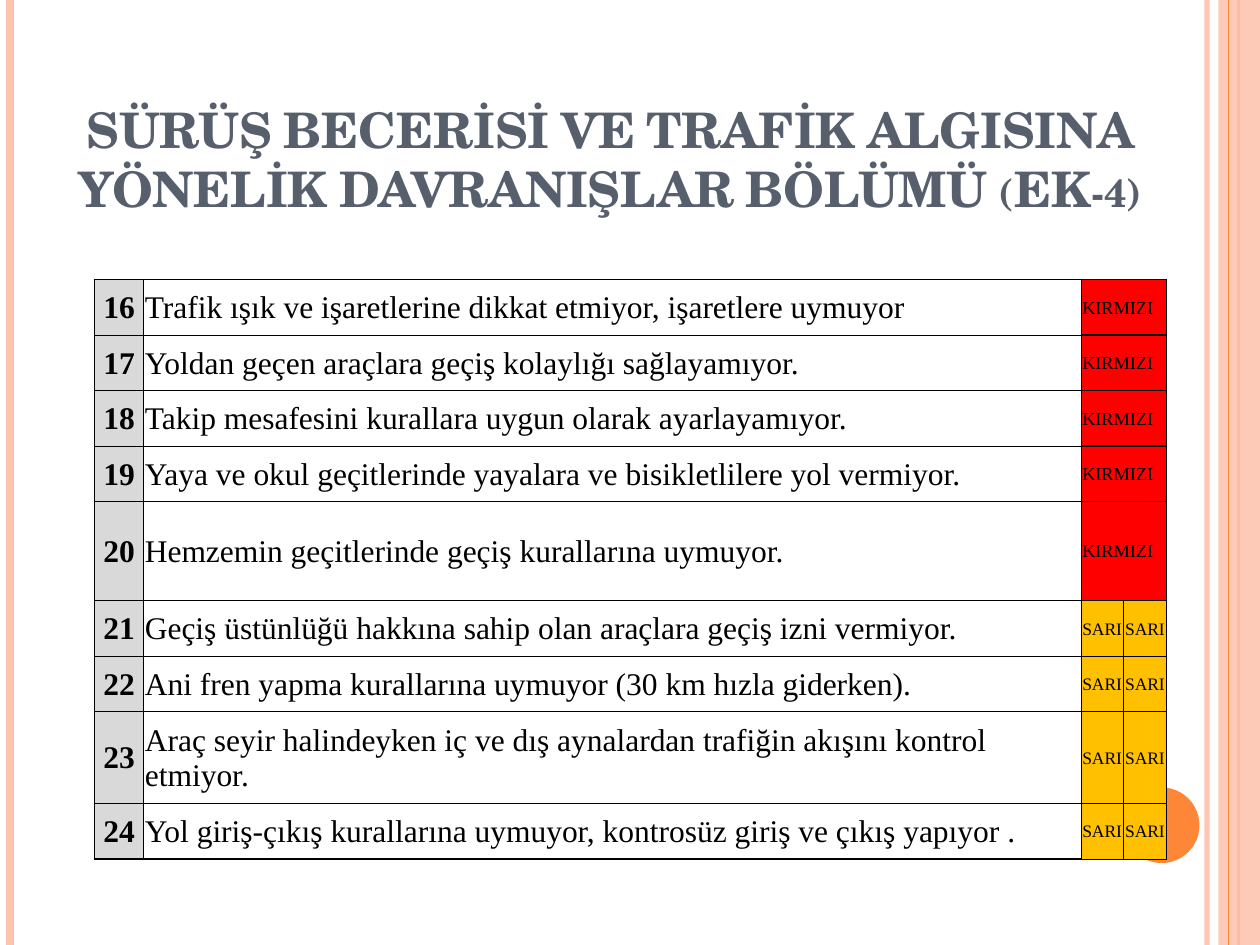
"""Build a slide with a table of driving-skill faults."""
from dataclasses import dataclass

from lxml import etree
from pptx import Presentation
from pptx.dml.color import RGBColor
from pptx.enum.shapes import MSO_CONNECTOR, MSO_SHAPE
from pptx.enum.text import MSO_ANCHOR, PP_ALIGN
from pptx.oxml.ns import qn
from pptx.util import Inches, Pt

STRAIGHT = MSO_CONNECTOR.STRAIGHT
RECTANGLE, OVAL = MSO_SHAPE.RECTANGLE, MSO_SHAPE.OVAL
MIDDLE, BOTTOM = MSO_ANCHOR.MIDDLE, MSO_ANCHOR.BOTTOM
LEFT, CENTER = PP_ALIGN.LEFT, PP_ALIGN.CENTER


@dataclass(frozen=True)
class Theme:
    """Colours, fonts and type sizes of the slide."""
    peach: str = "FEC3AE"
    orange: str = "FE8637"
    slate: str = "575F6D"
    black: str = "000000"
    grey: str = "D9D9D9"
    red: str = "FF0000"
    yellow: str = "FFC000"
    title_font: str = "TeX Gyre Schola"
    table_font: str = "Times New Roman"
    title_size: float = 28
    body_size: float = 18
    red_size: float = 10.5
    yellow_size: float = 10
    thin: float = 0.5
    thick: float = 1


THEME = Theme()
TITLE = "SÜRÜŞ BECERİSİ VE TRAFİK ALGISINA YÖNELİK DAVRANIŞLAR BÖLÜMÜ (EK-4)"
FIRST_NUMBER = 16
RED_COUNT = 5
COLUMN_WIDTHS = (0.39, 7.44, 0.34, 0.34)
ROW_HEIGHT = 0.44
TALL_ROWS = {4: 0.79, 7: 0.73}
FAULTS = (
    "Trafik ışık ve işaretlerine dikkat etmiyor, işaretlere uymuyor",
    "Yoldan geçen araçlara geçiş kolaylığı sağlayamıyor.",
    "Takip mesafesini kurallara uygun olarak ayarlayamıyor.",
    "Yaya ve okul geçitlerinde yayalara ve bisikletlilere yol vermiyor.",
    "Hemzemin geçitlerinde geçiş kurallarına uymuyor.",
    "Geçiş üstünlüğü hakkına sahip olan araçlara geçiş izni vermiyor.",
    "Ani fren yapma kurallarına uymuyor (30 km hızla giderken).",
    "Araç seyir halindeyken iç ve dış aynalardan trafiğin akışını kontrol etmiyor.",
    "Yol giriş-çıkış kurallarına uymuyor, kontrosüz giriş ve çıkış yapıyor .",
)


def set_opacity(shape, percent):
    """Make the first colour of a shape partly transparent."""
    color = next(shape._element.spPr.iter(qn("a:srgbClr")))
    etree.SubElement(color, qn("a:alpha")).set("val", str(percent * 1000))


def add_stripe(slide, x, color, width):
    """Draw a vertical line over the full slide height."""
    stripe = slide.shapes.add_connector(
        STRAIGHT, Inches(x), Inches(0), Inches(x), Inches(7.5))
    stripe.line.color.rgb = RGBColor.from_string(color)
    stripe.line.width = Pt(width)
    etree.SubElement(stripe._element.spPr, qn("a:effectLst"))
    return stripe


def add_block(slide, kind, box, color):
    """Draw a filled shape without an outline."""
    shape = slide.shapes.add_shape(kind, *map(Inches, box))
    shape.shadow.inherit = False
    shape.fill.solid()
    shape.fill.fore_color.rgb = RGBColor.from_string(color)
    shape.line.fill.background()
    return shape


def add_text(frame, text, font, size, color, bold=False, align=LEFT):
    """Write one run into the first paragraph and return the run."""
    paragraph = frame.paragraphs[0]
    paragraph.alignment = align
    run = paragraph.add_run()
    run.text = text
    run.font.name = font
    run.font.size = Pt(size)
    run.font.bold = bold
    run.font.color.rgb = RGBColor.from_string(color)
    return run


def add_title(slide):
    """Add the centred title in small capitals."""
    box = slide.shapes.add_textbox(
        Inches(0.28), Inches(0.52), Inches(9.13), Inches(1.25))
    frame = box.text_frame
    frame.word_wrap = True
    frame.vertical_anchor = BOTTOM
    run = add_text(frame, TITLE, THEME.title_font, THEME.title_size,
                   THEME.slate, True, CENTER)
    run._r.get_or_add_rPr().set("cap", "small")


def set_borders(cell, thick_sides):
    """Draw all four cell borders, the named sides thicker."""
    properties = cell._tc.get_or_add_tcPr()
    for side in "LRTB":
        width = THEME.thick if side in thick_sides else THEME.thin
        line = etree.SubElement(properties, qn(f"a:ln{side}"), w=str(Pt(width)))
        fill = etree.SubElement(line, qn("a:solidFill"))
        etree.SubElement(fill, qn("a:srgbClr"), val=THEME.black)


def fill_cell(cell, text, size, color=None, thick_sides="", bold=False, align=LEFT):
    """Set text, margins, borders and fill of a table cell."""
    cell.margin_left = cell.margin_top = cell.margin_right = Inches(0.01)
    cell.margin_bottom = Inches(0)
    cell.vertical_anchor = MIDDLE
    set_borders(cell, thick_sides)
    if color:
        cell.fill.solid()
        cell.fill.fore_color.rgb = RGBColor.from_string(color)
    else:
        cell.fill.background()
    if text:
        add_text(cell.text_frame, text, THEME.table_font, size, THEME.black, bold, align)


def add_fault_table(slide):
    """Add the numbered faults with their red or yellow rating."""
    last = len(FAULTS) - 1
    table = slide.shapes.add_table(
        len(FAULTS), len(COLUMN_WIDTHS), Inches(0.75), Inches(2.22),
        Inches(8.5), Inches(4.6)).table
    table.first_row = table.horz_banding = False
    for column, width in zip(table.columns, COLUMN_WIDTHS):
        column.width = Inches(width)
    for index, fault in enumerate(FAULTS):
        table.rows[index].height = Inches(TALL_ROWS.get(index, ROW_HEIGHT))
        number, description, first, second = table.rows[index].cells
        edge = "T" if index == 0 else "B" if index == last else ""
        fill_cell(number, str(FIRST_NUMBER + index), THEME.body_size,
                  THEME.grey, "L" + edge, True, CENTER)
        fill_cell(description, fault, THEME.body_size, thick_sides=edge)
        if index < RED_COUNT:
            sides = "TR" if index == RED_COUNT - 1 else "TRB"
            first.merge(second)
            fill_cell(first, "KIRMIZI", THEME.red_size, THEME.red, sides)
            fill_cell(second, "", THEME.red_size, THEME.red, sides)
        else:
            for cell in (first, second):
                fill_cell(cell, "SARI", THEME.yellow_size, THEME.yellow)


def add_decoration(slide):
    """Draw the side stripes, the band and the dot."""
    set_opacity(add_stripe(slide, 9.58, THEME.peach, 3), 93)
    add_stripe(slide, 0.08, THEME.peach, 4.5)
    add_stripe(slide, 9.83, THEME.orange, 1.5)
    set_opacity(add_block(slide, RECTANGLE, (9.67, 0, 0.33, 7.5), THEME.peach), 87)
    add_stripe(slide, 9.75, THEME.orange, 0.75)
    add_block(slide, OVAL, (8.92, 6.25, 0.6, 0.6), THEME.orange)


def main():
    """Build and save the presentation."""
    presentation = Presentation()
    presentation.slide_width, presentation.slide_height = Inches(10), Inches(7.5)
    slide = presentation.slides.add_slide(presentation.slide_layouts[6])
    add_decoration(slide)
    add_title(slide)
    add_fault_table(slide)
    presentation.save("out.pptx")


if __name__ == "__main__":
    main()
